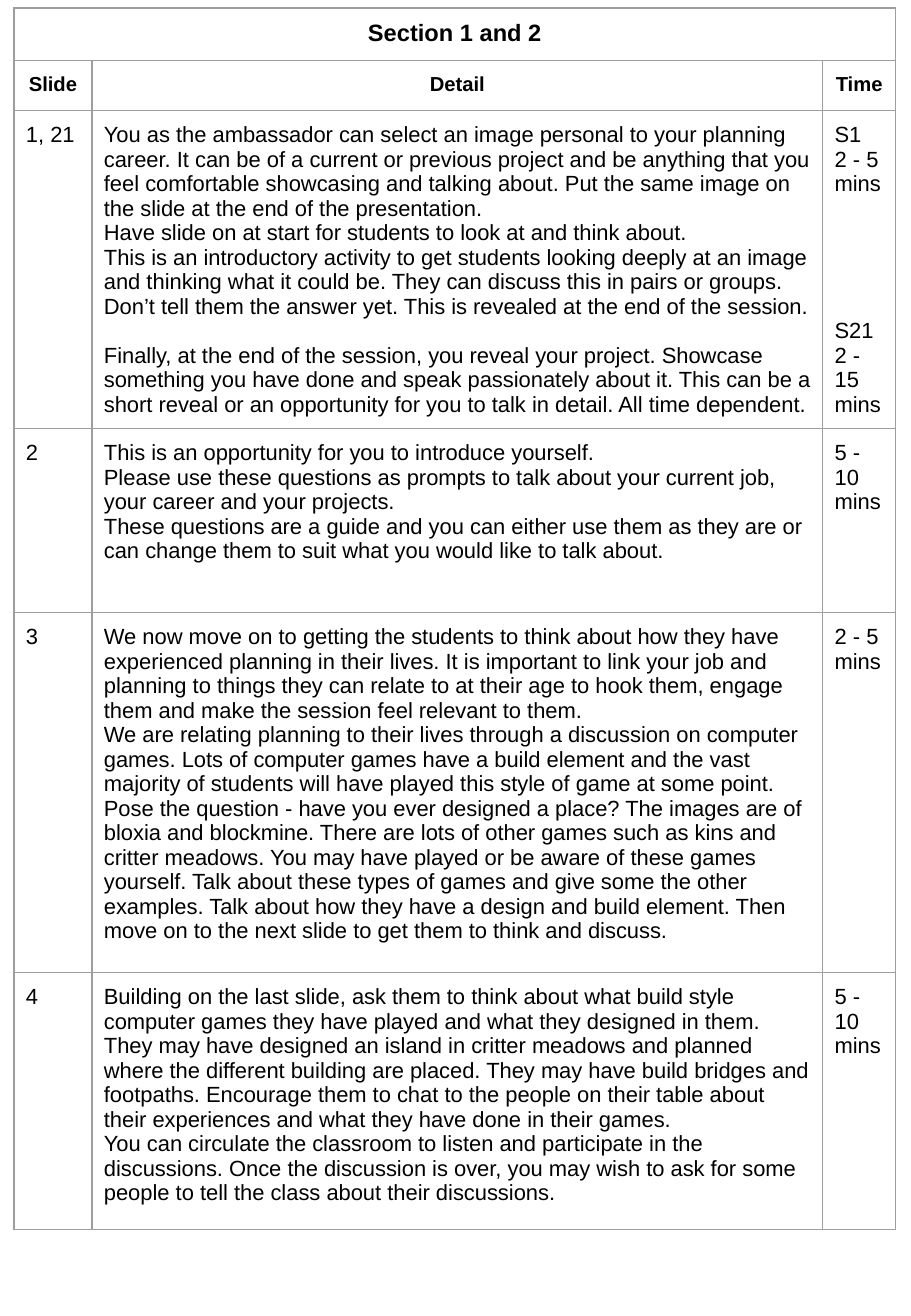
import pptx
import pptx.dml.color
import pptx.enum.text
import pptx.oxml
import pptx.oxml.ns
import pptx.util

PX = 914400 / 121.5
COLORS = {"text": "000000", "border": "9E9E9E"}
FONT = "Arial"
BODY_SIZE = 13
LINE_PT = 14.5
INSET = 12
COLUMNS = [78, 731, 73]
ROWS = [53, 50, 318, 184, 360, 257]

TITLE = "Section 1 and 2"
HEADINGS = ["Slide", "Detail", "Time"]
# Each cell lists its paragraphs as (text, lines of space before).
SESSION = [
    [
        [("1, 21", 0)],
        [
            ("You as the ambassador can select an image personal to your planning career. "
             "It can be of a current or previous project and be anything that you feel "
             "comfortable showcasing and talking about. Put the same image on the slide at "
             "the end of the presentation.", 0),
            ("Have slide on at start for students to look at and think about.", 0),
            ("This is an introductory activity to get students looking deeply at an image "
             "and thinking what it could be. They can discuss this in pairs or groups.", 0),
            ("Don’t tell them the answer yet. This is revealed at the end of the session.", 0),
            ("Finally, at the end of the session, you reveal your project. Showcase something "
             "you have done and speak passionately about it. This can be a short reveal or an "
             "opportunity for you to talk in detail. All time dependent.", 1),
        ],
        [("S1", 0), ("2 - 5 mins", 0), ("S21", 5), ("2 - 15 mins", 0)],
    ],
    [
        [("2", 0)],
        [
            ("This is an opportunity for you to introduce yourself.", 0),
            ("Please use these questions as prompts to talk about your current job, your "
             "career and your projects.", 0),
            ("These questions are a guide and you can either use them as they are or can "
             "change them to suit what you would like to talk about.", 0),
        ],
        [("5 - 10 mins", 0)],
    ],
    [
        [("3", 0)],
        [
            ("We now move on to getting the students to think about how they have experienced "
             "planning in their lives. It is important to link your job and planning to things "
             "they can relate to at their age to hook them, engage them and make the session "
             "feel relevant to them.", 0),
            ("We are relating planning to their lives through a discussion on computer games. "
             "Lots of computer games have a build element and the vast majority of students "
             "will have played this style of game at some point.", 0),
            ("Pose the question - have you ever designed a place? The images are of bloxia and "
             "blockmine. There are lots of other games such as kins and critter meadows. You "
             "may have played or be aware of these games yourself. Talk about these types of "
             "games and give some the other examples. Talk about how they have a design and "
             "build element. Then move on to the next slide to get them to think and "
             "discuss.", 0),
        ],
        [("2 - 5 mins", 0)],
    ],
    [
        [("4", 0)],
        [
            ("Building on the last slide, ask them to think about what build style computer "
             "games they have played and what they designed in them. They may have designed "
             "an island in critter meadows and planned where the different building are "
             "placed. They may have build bridges and footpaths. Encourage them to chat to "
             "the people on their table about their experiences and what they have done in "
             "their games.", 0),
            ("You can circulate the classroom to listen and participate in the discussions. "
             "Once the discussion is over, you may wish to ask for some people to tell the "
             "class about their discussions.", 0),
        ],
        [("5 - 10 mins", 0)],
    ],
]


def px(n):
    return pptx.util.Emu(round(n * PX))


def set_borders(cell):
    tcPr = cell._tc.get_or_add_tcPr()
    for i, side in enumerate(("lnL", "lnR", "lnT", "lnB")):
        tcPr.insert(i, pptx.oxml.parse_xml(
            f'<a:{side} {pptx.oxml.ns.nsdecls("a")} w="9525"><a:solidFill>'
            f'<a:srgbClr val="{COLORS["border"]}"/></a:solidFill></a:{side}>'))


def style_cell(cell):
    cell.margin_left = cell.margin_right = px(INSET)
    cell.margin_top = cell.margin_bottom = px(INSET)
    cell.fill.background()
    set_borders(cell)


def write_cell(cell, paragraphs, size=BODY_SIZE, heading=False):
    tf = cell.text_frame
    for i, (text, lines_before) in enumerate(paragraphs):
        p = tf.add_paragraph() if i else tf.paragraphs[0]
        p.space_before = pptx.util.Pt(lines_before * LINE_PT)
        align = pptx.enum.text.PP_ALIGN
        p.alignment = align.CENTER if heading else align.LEFT
        r = p.add_run()
        r.text = text
        r.font.name = FONT
        r.font.size = pptx.util.Pt(size)
        r.font.bold = heading
        r.font.color.rgb = pptx.dml.color.RGBColor.from_string(COLORS["text"])


def add_session_table(s):
    frame = s.shapes.add_table(len(ROWS), len(COLUMNS), px(14), px(8),
                               px(sum(COLUMNS)), px(sum(ROWS)))
    table = frame.table
    table.first_row = table.horz_banding = False
    for column, width in zip(table.columns, COLUMNS):
        column.width = px(width)
    for row, height in zip(table.rows, ROWS):
        row.height = px(height)
    for cell in table.iter_cells():
        style_cell(cell)

    table.cell(0, 0).merge(table.cell(0, len(COLUMNS) - 1))
    write_cell(table.cell(0, 0), [(TITLE, 0)], size=14, heading=True)
    for c, text in enumerate(HEADINGS):
        write_cell(table.cell(1, c), [(text, 0)], size=12, heading=True)
    for r, entry in enumerate(SESSION, start=2):
        for c, paragraphs in enumerate(entry):
            write_cell(table.cell(r, c), paragraphs)


def main():
    prs = pptx.Presentation()
    prs.slide_width = pptx.util.Inches(7.5)
    prs.slide_height = pptx.util.Inches(10.83)
    s = prs.slides.add_slide(prs.slide_layouts[6])
    add_session_table(s)
    prs.save("out.pptx")


if __name__ == "__main__":
    main()
